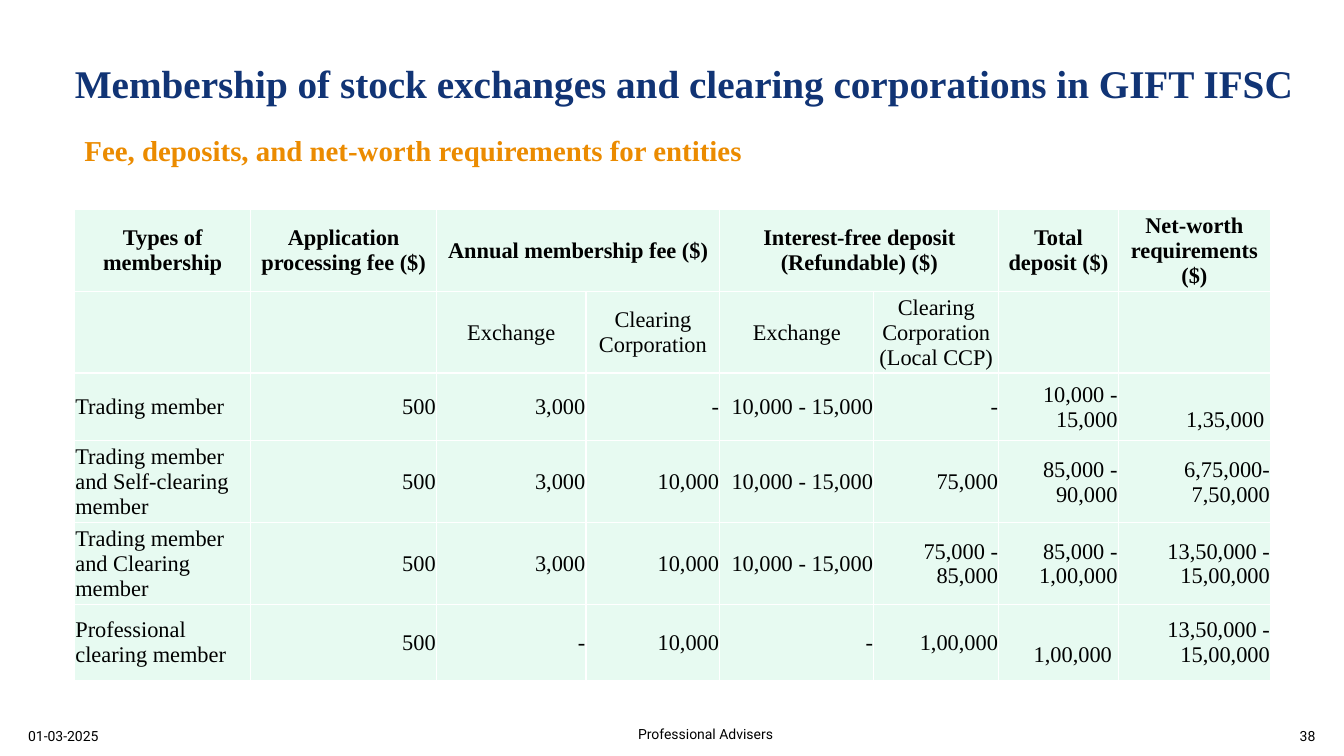
"""Build the slide on membership fees, deposits and net worth in GIFT IFSC."""
from dataclasses import dataclass

from lxml import etree
from pptx import Presentation
from pptx import util as u
from pptx.dml import color
from pptx.enum import text
from pptx.oxml import ns

LEFT, CENTER, RIGHT = text.PP_ALIGN.LEFT, text.PP_ALIGN.CENTER, text.PP_ALIGN.RIGHT


@dataclass(frozen=True)
class Style:
    font: str
    size: float
    colour: str
    bold: bool = False


@dataclass(frozen=True)
class Theme:
    title: Style = Style("Times New Roman", 28, "113475", True)
    subtitle: Style = Style("Times New Roman", 20.6, "EB8B00", True)
    header: Style = Style("Times New Roman", 16, "000000", True)
    body: Style = Style("Times New Roman", 16, "000000")
    footer: Style = Style("Roboto", 10, "000000")
    cell_fill: str = "E7FAF1"
    border: str = "FFFFFF"
    border_width: float = 1


@dataclass(frozen=True)
class Label:
    words: str
    left: float
    top: float
    width: float
    height: float
    style: Style
    align: text.PP_ALIGN = LEFT
    anchor: text.MSO_ANCHOR = text.MSO_ANCHOR.BOTTOM
    wrap: bool = True


@dataclass(frozen=True)
class Lowered:
    words: str


THEME = Theme()
TITLE = Label("Membership of stock exchanges and clearing corporations in GIFT IFSC",
              1.63, 1.37, 31.8, 1.45, THEME.title, anchor=text.MSO_ANCHOR.TOP, wrap=False)
LABELS = [
    Label("Fee, deposits, and net-worth requirements for entities",
          1.88, 3.23, 17.22, 1.14, THEME.subtitle, anchor=text.MSO_ANCHOR.TOP, wrap=False),
    Label("01-03-2025", 0.46, 17.6, 2.46, 1.27, THEME.footer),
    Label("Professional Advisers", 12.42, 17.57, 10.72, 1.27, THEME.footer, CENTER),
    Label("38", 32.18, 17.6, 1.22, 1.27, THEME.footer, RIGHT),
]
TABLE_LEFT, TABLE_TOP = 1.88, 5.28
COLUMN_WIDTHS = [4.44, 4.68, 3.77, 3.37, 3.88, 3.15, 3.01, 3.84]
ROW_HEIGHTS = [2.06, 2.06, 1.71, 2.06, 2.06, 1.91]
HEADER_ROWS = 2
MERGED_STARTS = [2, 4]
MARGIN = 0.02
ROWS = [
    ["Types of membership", "Application processing fee ($)", "Annual membership fee ($)", "",
     "Interest-free deposit (Refundable) ($)", "", "Total deposit ($)",
     "Net-worth requirements ($)"],
    ["", "", "Exchange", "Clearing Corporation", "Exchange",
     "Clearing Corporation (Local CCP)", "", ""],
    ["Trading member", "500", "3,000", "-", "10,000 - 15,000", "-", "10,000 - 15,000",
     Lowered("1,35,000")],
    ["Trading member and Self-clearing member", "500", "3,000", "10,000", "10,000 - 15,000",
     "75,000", "85,000 - 90,000", "6,75,000-7,50,000"],
    ["Trading member and Clearing member", "500", "3,000", "10,000", "10,000 - 15,000",
     "75,000 - 85,000", "85,000 - 1,00,000", "13,50,000 - 15,00,000"],
    ["Professional clearing member", "500", "-", "10,000", "-", "1,00,000",
     Lowered("1,00,000"), "13,50,000 - 15,00,000"],
]


def write(frame, words: str, style: Style, align: text.PP_ALIGN) -> None:
    para = frame.paragraphs[0]
    para.alignment = align
    span = para.add_run()
    span.text = words
    span.font.name = style.font
    span.font.size = u.Pt(style.size)
    span.font.bold = style.bold
    span.font.color.rgb = color.RGBColor.from_string(style.colour)


def place_label(box, label: Label) -> None:
    box.left, box.top = u.Cm(label.left), u.Cm(label.top)
    box.width, box.height = u.Cm(label.width), u.Cm(label.height)
    frame = box.text_frame
    frame.word_wrap = label.wrap
    frame.auto_size = (text.MSO_AUTO_SIZE.NONE if label.wrap
                       else text.MSO_AUTO_SIZE.SHAPE_TO_FIT_TEXT)
    frame.vertical_anchor = label.anchor
    write(frame, label.words, label.style, label.align)


def paint_cell(cell) -> None:
    properties = cell._tc.get_or_add_tcPr()
    for side in ("lnL", "lnR", "lnT", "lnB"):
        line = etree.SubElement(properties, ns.qn(f"a:{side}"),
                                w=str(u.Pt(THEME.border_width)))
        fill = etree.SubElement(line, ns.qn("a:solidFill"))
        etree.SubElement(fill, ns.qn("a:srgbClr"), val=THEME.border)
    cell.fill.solid()
    cell.fill.fore_color.rgb = color.RGBColor.from_string(THEME.cell_fill)


def fill_cell(cell, entry: str | Lowered, row: int, column: int) -> None:
    paint_cell(cell)
    if not entry:
        return
    lowered = isinstance(entry, Lowered)
    cell.vertical_anchor = text.MSO_ANCHOR.MIDDLE
    cell.margin_left = u.Cm(MARGIN)
    cell.margin_right = u.Cm(0.16 if lowered else MARGIN)
    cell.margin_top = u.Cm(0.63 if lowered else MARGIN)
    cell.margin_bottom = u.Cm(0)
    if row < HEADER_ROWS:
        align = CENTER
    else:
        align = RIGHT if column else LEFT
    write(cell.text_frame, entry.words if lowered else entry,
          THEME.body if row else THEME.header, align)


def add_fee_table(page) -> None:
    table = page.shapes.add_table(
        len(ROWS), len(COLUMN_WIDTHS), u.Cm(TABLE_LEFT), u.Cm(TABLE_TOP),
        u.Cm(sum(COLUMN_WIDTHS)), u.Cm(sum(ROW_HEIGHTS))).table
    table.first_row = table.horz_banding = False
    for column, width in zip(table.columns, COLUMN_WIDTHS):
        column.width = u.Cm(width)
    for row, height in zip(table.rows, ROW_HEIGHTS):
        row.height = u.Cm(height)
    for start in MERGED_STARTS:
        table.cell(0, start).merge(table.cell(0, start + 1))
    for row, entries in enumerate(ROWS):
        for column, entry in enumerate(entries):
            fill_cell(table.cell(row, column), entry, row, column)


def main() -> None:
    deck = Presentation()
    deck.slide_width, deck.slide_height = u.Cm(33.87), u.Cm(19.05)
    page = deck.slides.add_slide(deck.slide_layouts[5])
    place_label(page.shapes.title, TITLE)
    for label in LABELS:
        place_label(page.shapes.add_textbox(0, 0, 0, 0), label)
    add_fee_table(page)
    deck.save("out.pptx")


if __name__ == "__main__":
    main()
